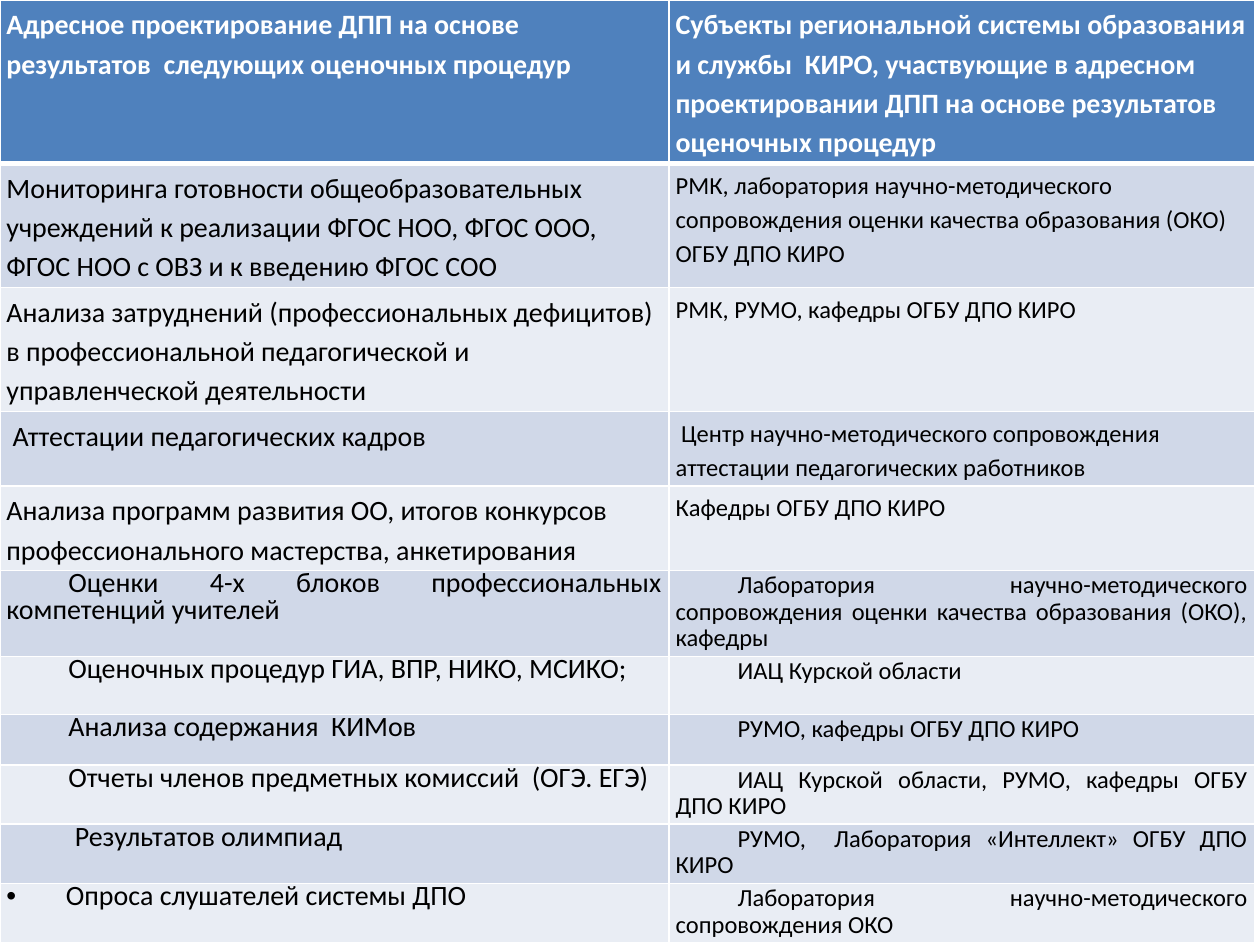
from lxml import etree
from pptx import Presentation
from pptx.dml.color import RGBColor
from pptx.enum.text import PP_ALIGN
from pptx.oxml.ns import qn
from pptx.util import Cm, Pt

LEFT, JUSTIFY = PP_ALIGN.LEFT, PP_ALIGN.JUSTIFY
WHITE = RGBColor(0xFF, 0xFF, 0xFF)
BLACK = RGBColor(0, 0, 0)
HEADER_BLUE = RGBColor(0x4F, 0x81, 0xBD)
BANDS = [RGBColor(0xE9, 0xED, 0xF4), RGBColor(0xD0, 0xD8, 0xE8)]

COLUMN_WIDTHS = [13.49, 11.81]
ROW_HEIGHTS = [2.74, 2.34, 2.34, 1.45, 1.6, 1.65, 1.17, 1.02, 1.07, 1.02, 1.1]
FIRST_INDENTED_ROW = 5
CELL_MARGINS = {"margin_left": Cm(0.13), "margin_right": Cm(0.15),
                "margin_top": Cm(0.06), "margin_bottom": Cm(0.06)}
OPEN_PARAGRAPH = {"alignment": LEFT, "line_spacing": 1.15}
INDENTED_PARAGRAPH = {"alignment": JUSTIFY, "line_spacing": Pt(15.2),
                      "space_after": Pt(10)}

PROCEDURES = [
    ("Адресное проектирование ДПП на основе  результатов  следующих оценочных процедур",
     "Субъекты региональной системы образования и службы  КИРО, участвующие в адресном  "
     "проектировании ДПП на основе результатов оценочных процедур"),
    ("Мониторинга готовности общеобразовательных учреждений к реализации ФГОС НОО, "
     "ФГОС ООО, ФГОС НОО с ОВЗ и к введению ФГОС СОО",
     "РМК, лаборатория научно-методического сопровождения оценки качества образования "
     "(ОКО) ОГБУ ДПО КИРО"),
    ("Анализа затруднений (профессиональных дефицитов) в профессиональной "
     "педагогической и управленческой деятельности",
     "РМК, РУМО, кафедры ОГБУ ДПО КИРО"),
    (" Аттестации педагогических кадров",
     " Центр научно-методического сопровождения аттестации педагогических работников"),
    ("Анализа программ развития ОО, итогов конкурсов профессионального мастерства, "
     "анкетирования",
     "Кафедры ОГБУ ДПО КИРО"),
    ("Оценки 4-х блоков профессиональных компетенций учителей",
     "Лаборатория научно-методического сопровождения оценки качества образования "
     "(ОКО), кафедры"),
    ("Оценочных процедур ГИА, ВПР, НИКО, МСИКО;", "ИАЦ Курской области"),
    ("Анализа содержания  КИМов", "РУМО, кафедры ОГБУ ДПО КИРО"),
    ("Отчеты членов предметных комиссий  (ОГЭ. ЕГЭ)",
     "ИАЦ Курской области, РУМО, кафедры ОГБУ ДПО КИРО"),
    (" Результатов олимпиад", "РУМО,  Лаборатория «Интеллект» ОГБУ ДПО КИРО"),
    ("Опроса слушателей системы ДПО",
     "Лаборатория научно-методического сопровождения ОКО"),
]


def apply_format(target, values):
    for name, value in values.items():
        setattr(target, name, value)


def set_borders(cell, widths):
    properties = cell._tc.get_or_add_tcPr()
    for side, width in widths.items():
        line = etree.SubElement(properties, qn(f"a:ln{side}"), w=str(Pt(width)))
        fill = etree.SubElement(line, qn("a:solidFill"))
        etree.SubElement(fill, qn("a:srgbClr"), val=str(WHITE))


def set_indent(paragraph, left, first_line, bullet=None):
    properties = paragraph._p.get_or_add_pPr()
    properties.set("marL", str(Cm(left)))
    properties.set("indent", str(Cm(first_line)))
    if bullet:
        etree.SubElement(properties, qn("a:buFont"), typeface="Arial")
        etree.SubElement(properties, qn("a:buChar"), char=bullet)


def fill_cell(cell, text, row, column):
    header = row == 0
    apply_format(cell, CELL_MARGINS)
    set_borders(cell, {"L": 1, "R": 1, "T": 3 if row == 1 else 1, "B": 3 if header else 1})
    cell.fill.solid()
    cell.fill.fore_color.rgb = HEADER_BLUE if header else BANDS[row % 2]

    paragraph = cell.text_frame.paragraphs[0]
    indented = row >= FIRST_INDENTED_ROW
    if indented:
        bulleted = row == len(PROCEDURES) - 1 and column == 0
        set_indent(paragraph, *((1.2, -1.2, "•") if bulleted else (0, 1.25)))
    apply_format(paragraph, INDENTED_PARAGRAPH if indented else OPEN_PARAGRAPH)

    run = paragraph.add_run()
    run.text = text
    apply_format(run.font, {"name": "Calibri", "bold": header,
                            "size": Pt(16 if header or column == 0 else 14)})
    run.font.color.rgb = WHITE if header else BLACK


def add_procedures_table(slide, left, top, width, height):
    table = slide.shapes.add_table(len(PROCEDURES), len(COLUMN_WIDTHS),
                                   left, top, width, height).table
    for column, share in zip(table.columns, COLUMN_WIDTHS):
        column.width = int(width * share / sum(COLUMN_WIDTHS))
    for row, share in zip(table.rows, ROW_HEIGHTS):
        row.height = int(height * share / sum(ROW_HEIGHTS))
    for row, texts in enumerate(PROCEDURES):
        for column, text in enumerate(texts):
            fill_cell(table.cell(row, column), text, row, column)


def main():
    presentation = Presentation()
    presentation.slide_width, presentation.slide_height = Cm(25.4), Cm(19.05)
    slide = presentation.slides.add_slide(presentation.slide_layouts[6])
    add_procedures_table(slide, Cm(0), Cm(0),
                         Cm(sum(COLUMN_WIDTHS)), Cm(sum(ROW_HEIGHTS)))
    presentation.save("out.pptx")


if __name__ == "__main__":
    main()
